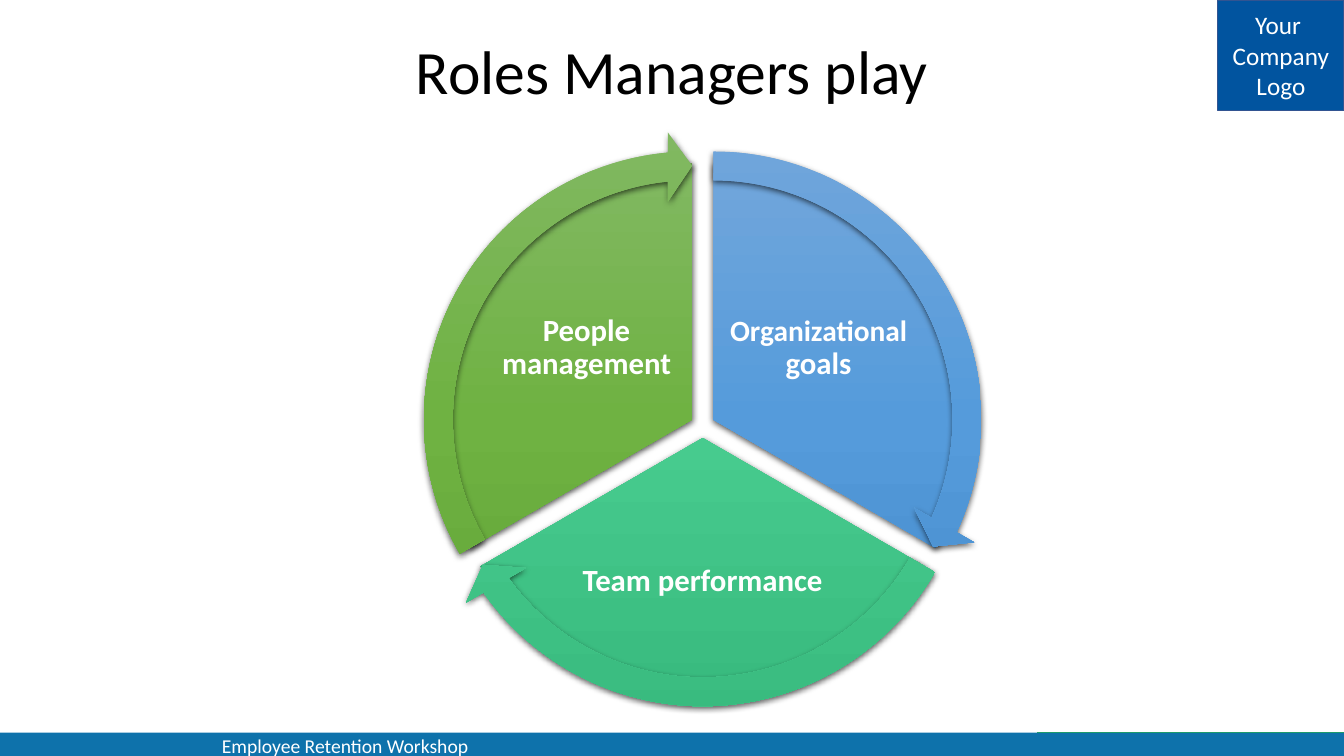
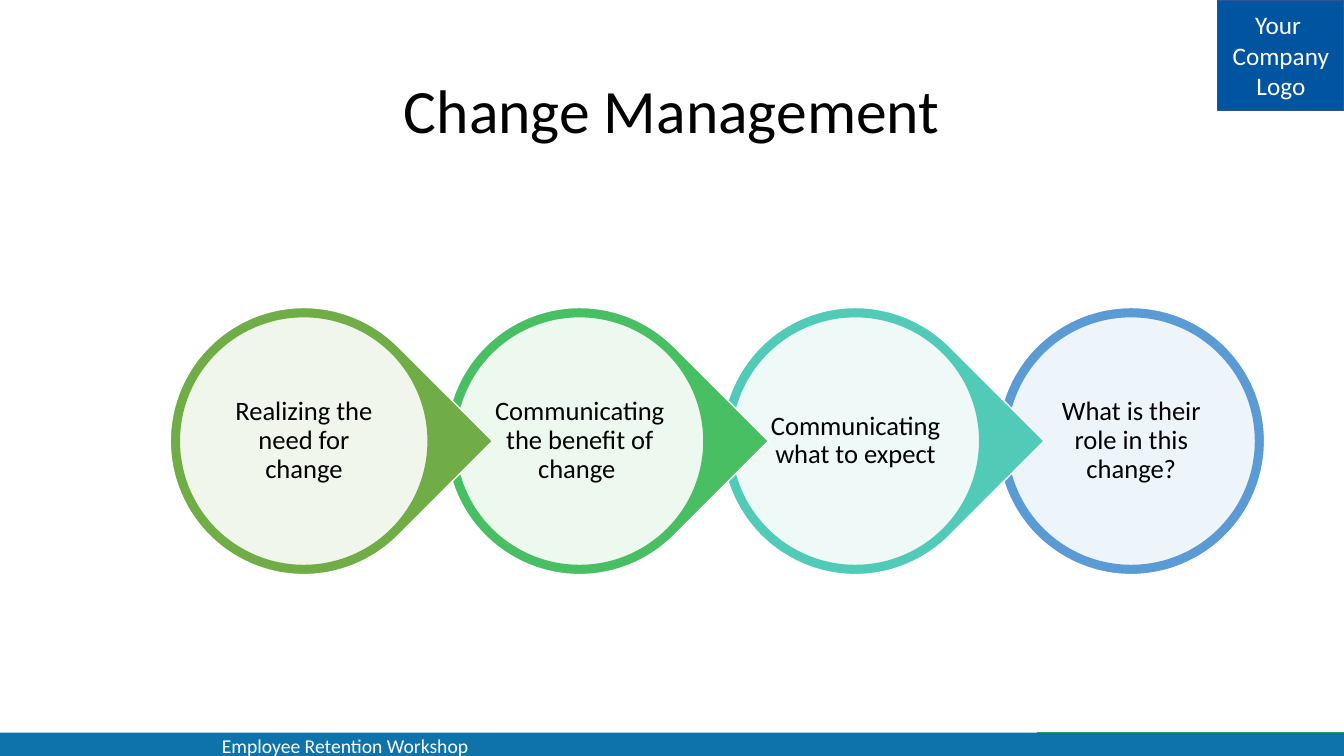
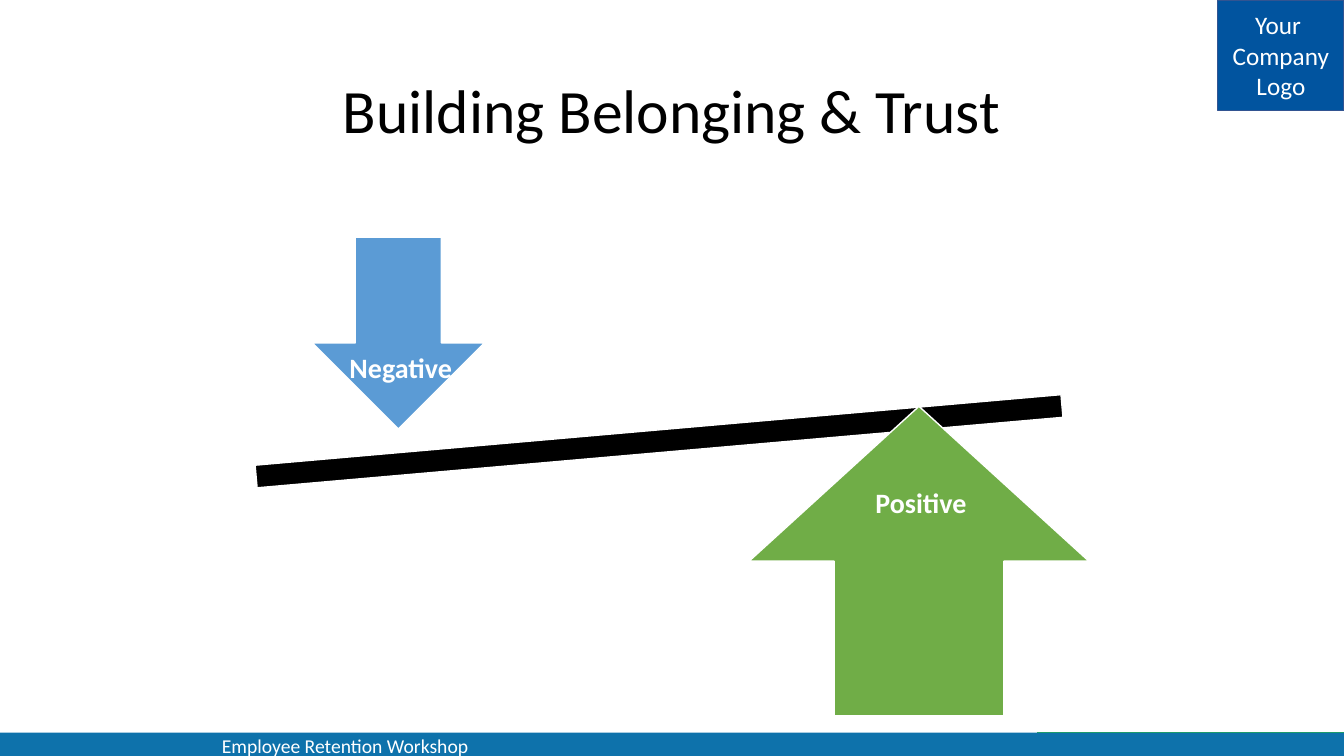
import math
from dataclasses import dataclass
from typing import NamedTuple, Optional

from pptx import Presentation
from pptx import util as u
from pptx.dml.color import RGBColor
from pptx.enum import shapes, text
from pptx.oxml import parse_xml
from pptx.oxml.ns import nsdecls, qn

MSO = shapes.MSO_SHAPE
FONT = "Calibri"
COLORS = {
    "white": "FFFFFF", "black": "000000",
    "band": "0E72AB", "band_accent": "26B24B",
    "logo": "01549F", "logo_edge": "325491",
    "blue": "5B9BD5", "teal": "52CAB8", "green": "49BF64", "olive": "70AD47",
}
GRADIENTS = {
    "blue": ("71A6DB", "559BDB", "448ACA"),
    "green": ("67CC9A", "47CB8E", "39BB7F"),
    "olive": ("81B861", "6FB242", "62A336"),
}


class Box(NamedTuple):
    """Left, top, width and height in centimetres."""
    x: float
    y: float
    w: float
    h: float

    def lengths(self) -> list:
        return [u.Cm(v) for v in self]


class Run(NamedTuple):
    text: str
    size: int


@dataclass
class Sector:
    gradient: str
    label: Box
    runs: list[Run]


@dataclass
class Step:
    color: str
    label: str


@dataclass
class Force:
    kind: int
    color: str
    arrow: Box
    label: str
    label_box: Box
    inset: float


SECTORS = [
    Sector("blue", Box(18.23, 6.86, 4.8, 3.84), [Run("Organizational", 21), Run(" goals", 22)]),
    Sector("green", Box(14.33, 12.97, 6.93, 3.38), [Run("Team performance ", 22)]),
    Sector("olive", Box(12.38, 6.86, 4.8, 3.84), [Run("People management", 22)]),
]
STEPS = [
    Step("olive", "Realizing the need for change"),
    Step("green", "Communicating the benefit of change "),
    Step("teal", "Communicating what to expect"),
    Step("blue", "What is their role in this change?"),
]
FORCES = [
    Force(MSO.DOWN_ARROW, "blue", Box(7.87, 5.98, 4.34, 4.83),
          "Negative", Box(6.71, 6.78, 6.78, 5.08), 0.41),
    Force(MSO.UP_ARROW, "olive", Box(18.88, 10.24, 8.56, 7.8),
          "Positive", Box(18.64, 10.18, 9.14, 5.08), 0.64),
]


def rgb(name: str) -> RGBColor:
    return RGBColor.from_string(COLORS[name])


def add_preset(slide, kind: int, box: Box, fill: Optional[str] = None,
               line: Optional[str] = None, rotation: float = 0, adjust: tuple = ()):
    """Add a preset shape without shadow; a missing line colour means no line."""
    s = slide.shapes.add_shape(kind, *box.lengths())
    s.shadow.inherit = False
    s.rotation = rotation
    if fill:
        s.fill.solid()
        s.fill.fore_color.rgb = rgb(fill)
    if line:
        s.line.color.rgb = rgb(line)
        s.line.width = u.Pt(1)
    else:
        s.line.fill.background()
    for i, value in enumerate(adjust):
        s.adjustments[i] = value
    return s


def write(p, runs: list[Run], color: str, bold: bool = False) -> None:
    for run in runs:
        r = p.add_run()
        r.text = run.text
        style = {"name": FONT, "size": u.Pt(run.size), "bold": bold}
        for name, value in style.items():
            setattr(r.font, name, value)
        r.font.color.rgb = rgb(color)


def add_label(slide, box: Box, runs: list[Run], color: str, bold: bool = False,
              inset: Optional[float] = 0.08) -> None:
    """Add centred, wrapped text; an inset of None keeps the default margins."""
    tf = slide.shapes.add_textbox(*box.lengths()).text_frame
    frame = {"word_wrap": True, "vertical_anchor": text.MSO_ANCHOR.MIDDLE}
    if inset is not None:
        for side in ("left", "right", "top", "bottom"):
            frame[f"margin_{side}"] = u.Cm(inset)
    for name, value in frame.items():
        setattr(tf, name, value)
    p = tf.paragraphs[0]
    p.alignment = text.PP_ALIGN.CENTER
    p.line_spacing = 0.9
    write(p, runs, color, bold)


def set_gradient(s, colors: tuple) -> None:
    """Fill from top to bottom with evenly spaced stops."""
    last = len(colors) - 1
    stops = "".join(
        f'<a:gs pos="{100000 * i // last}"><a:srgbClr val="{c}"/></a:gs>'
        for i, c in enumerate(colors))
    s.element.spPr.find(qn("a:prstGeom")).addnext(parse_xml(
        f'<a:gradFill {nsdecls("a")} rotWithShape="1"><a:gsLst>{stops}</a:gsLst>'
        '<a:lin ang="5400000" scaled="0"/></a:gradFill>'))


def set_shadow(s) -> None:
    s.element.spPr.find(qn("a:effectLst")).append(parse_xml(
        f'<a:outerShdw {nsdecls("a")} blurRad="{u.Pt(4.5)}" dist="{u.Pt(1.5)}" dir="5400000"'
        ' algn="ctr" rotWithShape="0"><a:srgbClr val="000000"><a:alpha val="63000"/>'
        '</a:srgbClr></a:outerShdw>'))


def set_opacity(s, percent: int) -> None:
    color = s.element.spPr.find(f'{qn("a:solidFill")}/{qn("a:srgbClr")}')
    color.append(parse_xml(f'<a:alpha {nsdecls("a")} val="{percent * 1000}"/>'))


def add_page(prs, title: str, title_top: float = 1.02):
    """Add a slide with the footer band, logo box and title."""
    slide = prs.slides.add_slide(prs.slide_layouts[6])
    add_preset(slide, MSO.RECTANGLE, Box(26.14, 18.45, 7.73, 0.6), "band_accent")
    add_preset(slide, MSO.RECTANGLE, Box(0, 18.46, 33.87, 0.59), "band")

    tf = slide.shapes.add_textbox(*Box(5.34, 18.36, 9.12, 0.86).lengths()).text_frame
    tf.word_wrap = True
    write(tf.paragraphs[0], [Run("Employee Retention Workshop", 14)], "white")

    logo = add_preset(slide, MSO.RECTANGLE, Box(30.69, 0, 3.18, 2.78), "logo", "logo_edge")
    tf = logo.text_frame
    tf.vertical_anchor = text.MSO_ANCHOR.MIDDLE
    for i, line in enumerate(("Your ", "Company", "Logo")):
        p = tf.add_paragraph() if i else tf.paragraphs[0]
        p.alignment = text.PP_ALIGN.CENTER
        write(p, [Run(line, 18)], "white")

    add_label(slide, Box(2.33, title_top, 29.21, 3.68), [Run(title, 44)], "black", inset=None)
    return slide


def add_sector_shape(slide, kind: int, index: int, size: float, adjust: tuple) -> None:
    """Draw a shape pushed outwards from the hub along its sector's middle angle."""
    hub_x, hub_y, push = 17.71, 10.73, 0.31
    middle = math.radians(330 + 120 * index)
    box = Box(hub_x + push * math.cos(middle) - size / 2,
              hub_y + push * math.sin(middle) - size / 2, size, size)
    s = add_preset(slide, kind, box, adjust=adjust)
    set_gradient(s, GRADIENTS[SECTORS[index].gradient])
    set_shadow(s)


def build_roles(prs) -> None:
    slide = add_page(prs, "Roles Managers play", 0.03)
    unit = 0.6  # adjustment value of one degree
    starts = [(270 + 120 * i) % 360 for i in range(len(SECTORS))]
    ends = [(start + 120) % 360 for start in starts]
    for i, sector in enumerate(SECTORS):
        add_sector_shape(slide, MSO.PIE, i, 12.93, (starts[i] * unit, ends[i] * unit))
        add_label(slide, sector.label, sector.runs, "white", bold=True)
    for i in range(len(SECTORS)):
        head = (ends[i] - 5.46) * unit
        add_sector_shape(slide, MSO.CIRCULAR_ARROW, i, 14.53,
                         (0.05, 3.28, head, starts[i] * unit, 0.06))


def build_change(prs) -> None:
    slide = add_page(prs, "Change Management")
    left, top, pitch, size, rim = 4.29, 7.75, 6.95, 6.73, 0.23
    last = len(STEPS) - 1
    for i, step in reversed(list(enumerate(STEPS))):
        x = left + i * pitch
        kind, rotation = (MSO.OVAL, 0) if i == last else (MSO.TEAR, 45)
        add_preset(slide, kind, Box(x, top, size, size), step.color, "white", rotation)
        disc = Box(x + rim, top + rim, size - 2 * rim, size - 2 * rim)
        set_opacity(add_preset(slide, MSO.OVAL, disc, "white", step.color), 90)
        add_label(slide, Box(x + 1.12, top + 1.12, 4.5, 4.48), [Run(step.label, 19)], "black")


def build_trust(prs) -> None:
    slide = add_page(prs, "Building Belonging & Trust")
    add_preset(slide, MSO.MATH_MINUS, Box(2.74, 9.9, 27.74, 2.44), "black", "white", 355)
    for force in FORCES:
        add_preset(slide, force.kind, force.arrow, force.color, "white")
        add_label(slide, force.label_box, [Run(force.label, 20)], "white", True, force.inset)


def main() -> None:
    prs = Presentation()
    prs.slide_width, prs.slide_height = u.Cm(33.87), u.Cm(19.05)
    for build in (build_roles, build_change, build_trust):
        build(prs)
    prs.save("out.pptx")


if __name__ == "__main__":
    main()
